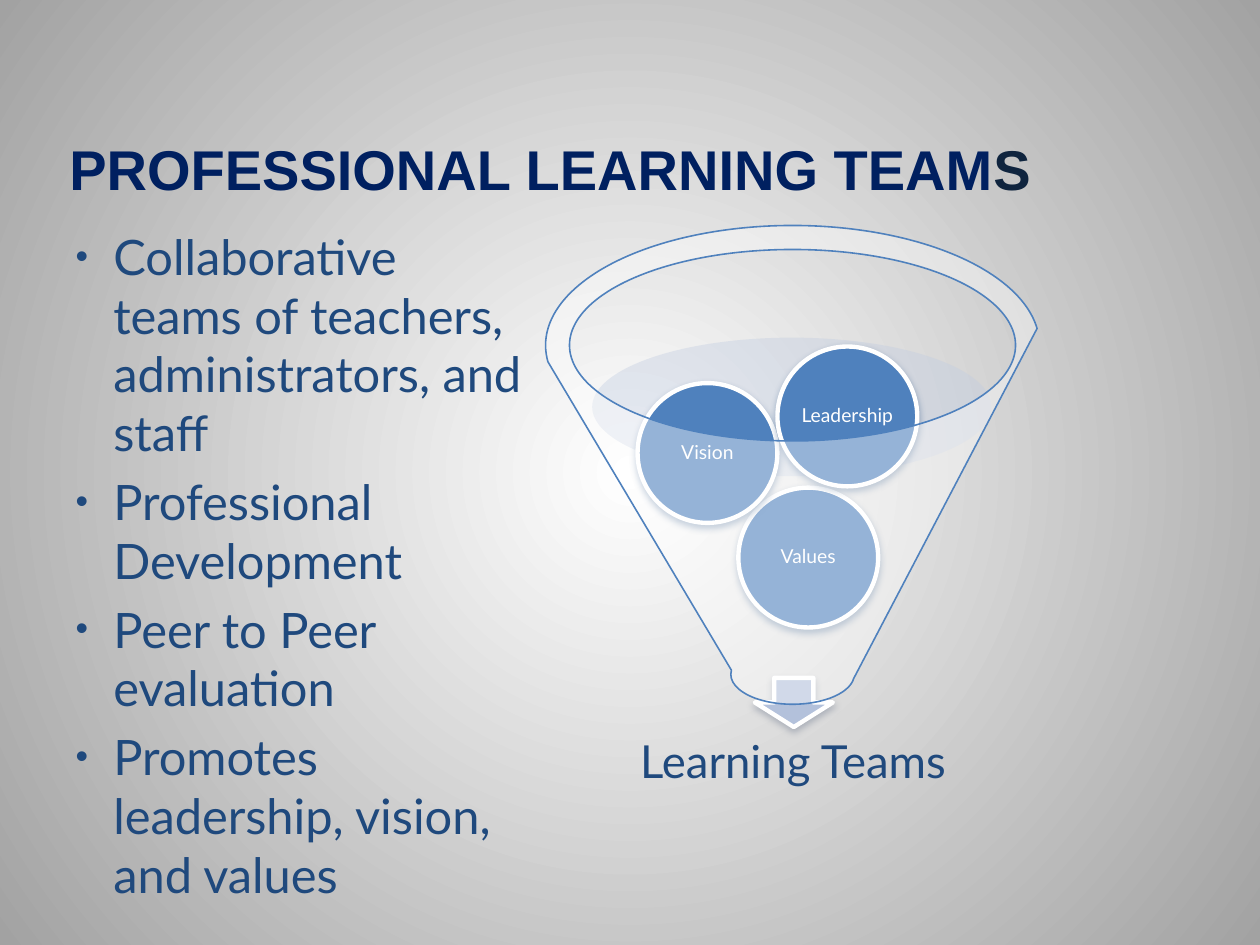
from lxml import etree
from pptx import Presentation
from pptx.dml.color import RGBColor
from pptx.enum.shapes import MSO_SHAPE
from pptx.enum.text import MSO_ANCHOR, MSO_AUTO_SIZE, PP_ALIGN
from pptx.oxml.ns import qn
from pptx.util import Inches, Pt

ELLIPSE, DOWN_ARROW, FUNNEL = MSO_SHAPE.OVAL, MSO_SHAPE.DOWN_ARROW, MSO_SHAPE.FUNNEL
BOTTOM, MIDDLE, TOP = MSO_ANCHOR.BOTTOM, MSO_ANCHOR.MIDDLE, MSO_ANCHOR.TOP
LEFT, CENTER = PP_ALIGN.LEFT, PP_ALIGN.CENTER
NO_AUTOFIT = MSO_AUTO_SIZE.NONE

WHITE = RGBColor(0xFF, 0xFF, 0xFF)
GRAY = RGBColor(0xA2, 0xA2, 0xA2)
NAVY = RGBColor(0x00, 0x20, 0x60)
DARK_NAVY = RGBColor(0x0F, 0x24, 0x3E)
TEXT_BLUE = RGBColor(0x1F, 0x49, 0x7D)
BLUE = RGBColor(0x4F, 0x81, 0xBD)
PALE_BLUE = RGBColor(0xC2, 0xCD, 0xE1)
ARROW_BLUE = RGBColor(0xB3, 0xC1, 0xDB)
BALL_SHADOW = RGBColor(0x1F, 0x4B, 0x80)
ARROW_SHADOW = RGBColor(0x64, 0x70, 0x87)


def add_styled_shape(kind, box, fill, line=None, width=0, opacity=100, shadow=None):
    """Add a filled shape; opacity is a percentage, shadow a colour or None."""
    shape = slide.shapes.add_shape(kind, *[Inches(length) for length in box])
    shape.shadow.inherit = False
    shape.fill.solid()
    shape.fill.fore_color.rgb = fill
    if opacity < 100:
        color = shape.fill._xPr.find(qn("a:solidFill"))[0]
        etree.SubElement(color, qn("a:alpha"), val=str(opacity * 1000))
    if line is None:
        shape.line.fill.background()
    else:
        shape.line.color.rgb = line
        shape.line.width = Pt(width)
    if shadow is not None:
        effects = shape._element.spPr.find(qn("a:effectLst"))
        outer = etree.SubElement(effects, qn("a:outerShdw"), blurRad=str(Pt(4)),
                                 dist=str(Pt(2)), dir="5400000", rotWithShape="0")
        color = etree.SubElement(outer, qn("a:srgbClr"), val=str(shadow))
        etree.SubElement(color, qn("a:alpha"), val="38000")
    return shape


def write_centered(shape, text, size, color, margin, wrap):
    frame = shape.text_frame
    frame.word_wrap = wrap
    frame.vertical_anchor = MIDDLE
    frame.margin_left = frame.margin_right = Inches(margin)
    frame.margin_top = frame.margin_bottom = Inches(margin)
    paragraph = frame.paragraphs[0]
    paragraph.alignment = CENTER
    paragraph.line_spacing = 0.9
    run = paragraph.add_run()
    run.text = text
    run.font.name = "Lato"
    run.font.size = Pt(size)
    run.font.color.rgb = color


presentation = Presentation()
presentation.slide_width = Inches(10)
presentation.slide_height = Inches(7.5)
slide = presentation.slides.add_slide(presentation.slide_layouts[1])

# Radial background
background = slide.background.fill
background.gradient()
for stop, color in zip(background.gradient_stops, (WHITE, GRAY)):
    stop.color.rgb = color
gradient = background._xPr.find(qn("a:gradFill"))
gradient.remove(gradient.find(qn("a:lin")))
circle = etree.SubElement(gradient, qn("a:path"), path="circle")
etree.SubElement(circle, qn("a:fillToRect"), l="50000", t="50000", r="50000", b="50000")

# Title
title = slide.shapes.title
title.left, title.top = Inches(0.5), Inches(0.35)
title.width, title.height = Inches(7.92), Inches(1.25)
frame = title.text_frame
frame.auto_size = NO_AUTOFIT
frame.vertical_anchor = BOTTOM
frame.margin_left = frame.margin_right = Inches(0.05)
frame.margin_top = frame.margin_bottom = 0
paragraph = frame.paragraphs[0]
paragraph.alignment = LEFT
for text, color in (("PROFESSIONAL LEARNING TEAM", NAVY), ("S", DARK_NAVY)):
    run = paragraph.add_run()
    run.text = text
    run.font.name = "Arial"
    run.font.size = Pt(32)
    run.font.bold = True
    run.font.color.rgb = color

# Bulleted list
body = slide.placeholders[1]
body.left, body.top = Inches(0.5), Inches(1.75)
body.width, body.height = Inches(3.85), Inches(4.95)
frame = body.text_frame
frame.auto_size = NO_AUTOFIT
frame.vertical_anchor = TOP
items = [
    "Collaborative teams of teachers, administrators, and staff",
    "Professional Development",
    "Peer to Peer evaluation",
    "Promotes leadership, vision, and values",
]
for index, item in enumerate(items):
    paragraph = frame.add_paragraph() if index else frame.paragraphs[0]
    paragraph.space_before = Pt(6 if index else 0)
    properties = paragraph._p.get_or_add_pPr()
    properties.set("marL", str(Inches(0.3)))
    properties.set("indent", str(Inches(-0.3)))
    bullet_color = etree.SubElement(properties, qn("a:buClr"))
    etree.SubElement(bullet_color, qn("a:srgbClr"), val=str(TEXT_BLUE))
    etree.SubElement(properties, qn("a:buSzPct"), val="73000")
    etree.SubElement(properties, qn("a:buFont"), typeface="Arial")
    etree.SubElement(properties, qn("a:buChar"), char="•")
    run = paragraph.add_run()
    run.text = item
    run.font.name = "Lato"
    run.font.size = Pt(27.9)
    run.font.color.rgb = TEXT_BLUE

# Funnel diagram, from back to front
add_styled_shape(ELLIPSE, (4.7, 2.68, 3.17, 1.1), PALE_BLUE, opacity=40)
add_styled_shape(DOWN_ARROW, (5.99, 5.38, 0.62, 0.39), ARROW_BLUE, WHITE, 2.5,
                 shadow=ARROW_SHADOW)
caption = slide.shapes.add_textbox(Inches(4.82), Inches(5.61), Inches(2.95), Inches(0.9))
write_centered(caption, "Learning Teams", 26, TEXT_BLUE, 0.2, True)

BALL_SIZE = 1.11
for label, left, top in (("Values", 5.86, 3.87), ("Vision", 5.06, 3.04),
                         ("Leadership", 6.17, 2.75)):
    ball = add_styled_shape(ELLIPSE, (left, top, BALL_SIZE, BALL_SIZE), BLUE, WHITE, 2.5,
                            shadow=BALL_SHADOW)
    write_centered(ball, label, 11, WHITE, 0.02, False)

add_styled_shape(FUNNEL, (4.33, 1.79, 3.92, 3.8), WHITE, BLUE, 0.9, opacity=40)

presentation.save("out.pptx")
